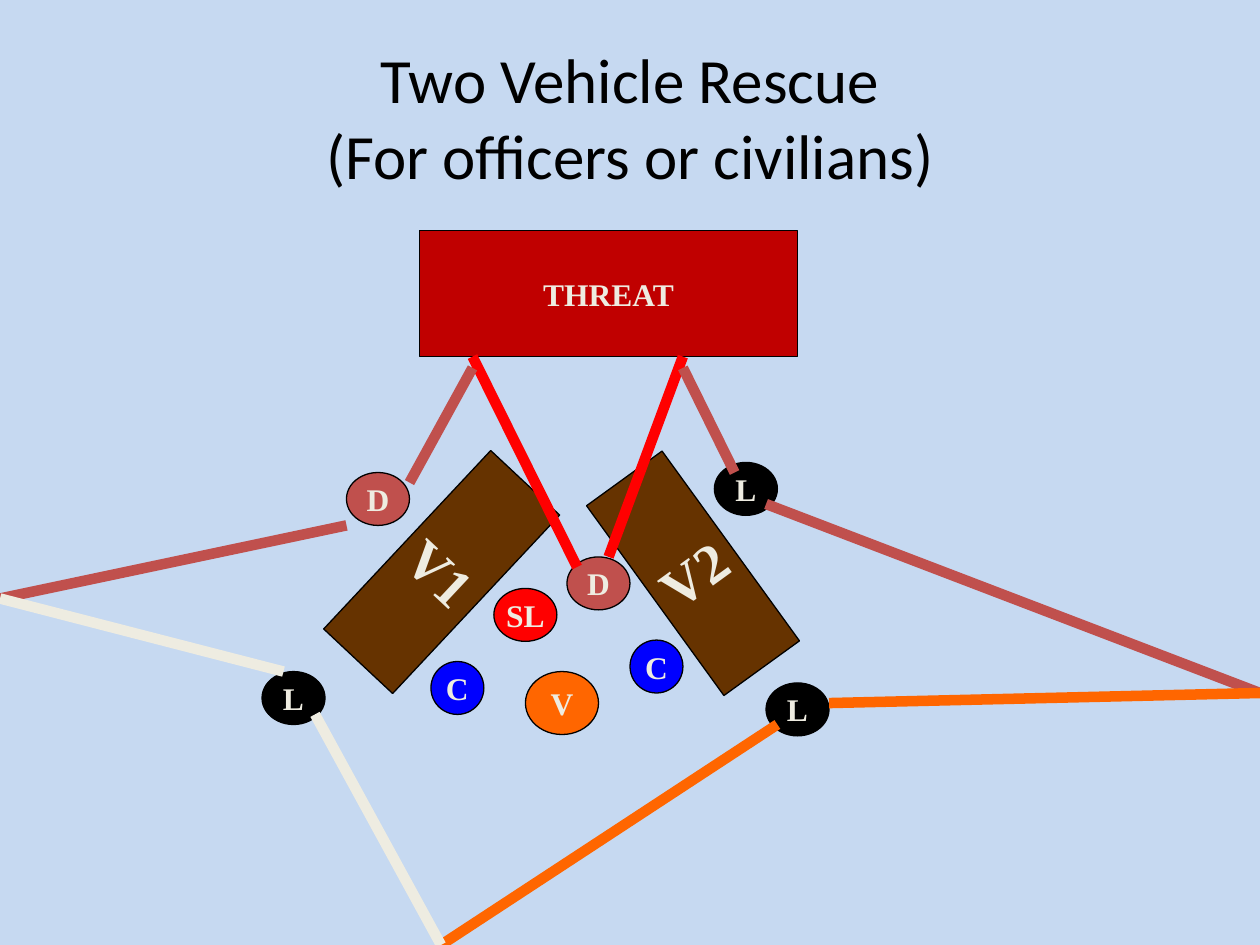
import pptx
import pptx.util
import pptx.dml.color
import pptx.enum.shapes
import pptx.enum.text
import pptx.oxml
import pptx.oxml.ns
from dataclasses import dataclass
from pptx.util import Inches

SHAPES = pptx.enum.shapes.MSO_SHAPE


@dataclass(frozen=True)
class Theme:
    background: str = "C6D9F1"
    ink: str = "000000"
    cream: str = "EEECE1"
    threat: str = "C00000"
    vehicle: str = "663300"
    victim: str = "FF6600"
    leader: str = "FF0000"
    driver: str = "C0504D"
    contact: str = "0000FF"
    title_font: str = "Calibri"
    label_font: str = "Times New Roman"
    title_size: int = 36
    vehicle_size: int = 32
    label_size: int = 18
    outline: float = 0.75
    sightline: float = 6


@dataclass(frozen=True)
class Box:
    left: float
    top: float
    width: float
    height: float

    def inside(self, left, top, width, height):
        return Box(self.left + left, self.top + top, width, height)

    def lengths(self):
        return [Inches(value) for value in (self.left, self.top, self.width, self.height)]


THEME = Theme()


def rgb(value):
    return pptx.dml.color.RGBColor.from_string(value)


def add_span(para, text, font, size, color, bold=False):
    span = para.add_run()
    span.text = text
    span.font.name = font
    span.font.size = pptx.util.Pt(size)
    span.font.bold = bold
    span.font.color.rgb = rgb(color)


def add_marker(page, kind, box, label, fill, size=THEME.label_size, rotation=0):
    marker = page.shapes.add_shape(kind, *box.lengths())
    marker.shadow.inherit = False
    marker.rotation = rotation
    marker.fill.solid()
    marker.fill.fore_color.rgb = rgb(fill)
    marker.line.color.rgb = rgb(THEME.ink)
    marker.line.width = pptx.util.Pt(THEME.outline)
    frame = marker.text_frame
    frame.word_wrap = False
    frame.vertical_anchor = pptx.enum.text.MSO_ANCHOR.MIDDLE
    para = frame.paragraphs[0]
    para.alignment = pptx.enum.text.PP_ALIGN.CENTER
    add_span(para, label, THEME.label_font, size, THEME.cream, bold=True)


def add_sightline(page, box, start, end, color):
    points = [Inches(value) for x, y in (start, end) for value in (box.left + x, box.top + y)]
    sightline = page.shapes.add_connector(pptx.enum.shapes.MSO_CONNECTOR.STRAIGHT, *points)
    sightline.line.color.rgb = rgb(color)
    sightline.line.width = pptx.util.Pt(THEME.sightline)
    properties = sightline._element.spPr
    properties.append(pptx.oxml.parse_xml(f"<a:effectLst {pptx.oxml.ns.nsdecls('a')}/>"))


def add_title(page, box):
    frame = page.shapes.add_textbox(*box.lengths()).text_frame
    frame.word_wrap = True
    frame.vertical_anchor = pptx.enum.text.MSO_ANCHOR.MIDDLE
    para = frame.paragraphs[0]
    para.alignment = pptx.enum.text.PP_ALIGN.CENTER
    add_span(para, "Two Vehicle Rescue", THEME.title_font, THEME.title_size, THEME.ink)
    para.add_line_break()
    add_span(para, "(For officers or civilians)", THEME.title_font, THEME.title_size, THEME.ink)


def add_vehicles(page, box):
    for label, place, rotation in (
        ("V1", (3.13, 1.07, 0.75, 1.94), 43.1),
        ("V2", (5.13, 1.12, 0.74, 1.86), 324.1),
    ):
        add_marker(page, SHAPES.RECTANGLE, box.inside(*place), label,
                   THEME.vehicle, THEME.vehicle_size, rotation)


def add_team(page, box):
    wide, large, small = (0.5, 0.42), (0.58, 0.5), (0.42, 0.42)
    for label, left, top, size, fill in (
        ("V", 4.17, 2.83, large, THEME.victim),
        ("L", 2.08, 2.83, wide, THEME.ink),
        ("SL", 3.92, 2.17, wide, THEME.leader),
        ("D", 2.75, 1.25, wide, THEME.driver),
        ("C", 3.42, 2.75, small, THEME.contact),
        ("D", 4.5, 1.92, wide, THEME.driver),
        ("C", 5, 2.58, small, THEME.contact),
        ("L", 6.08, 2.92, wide, THEME.ink),
        ("L", 5.67, 1.17, wide, THEME.ink),
    ):
        add_marker(page, SHAPES.OVAL, box.inside(left, top, *size), label, fill)


def add_sightlines(page, box):
    left_edge, right_edge, bottom_edge = (0, 2.25), (box.width, 3), (3.5, box.height)
    for start, end, color in (
        ((4.58, 2), (3.75, 0.33), THEME.leader),
        ((4.83, 1.92), (5.42, 0.33), THEME.leader),
        ((3.25, 1.33), (3.75, 0.42), THEME.driver),
        ((2.75, 1.67), left_edge, THEME.driver),
        ((5.83, 1.25), (5.42, 0.42), THEME.driver),
        ((6.08, 1.5), right_edge, THEME.driver),
        ((2.25, 2.83), left_edge, THEME.cream),
        ((6.58, 3.08), right_edge, THEME.victim),
        ((6.17, 3.25), bottom_edge, THEME.victim),
        ((2.5, 3.17), bottom_edge, THEME.cream),
    ):
        add_sightline(page, box, start, end, color)


def add_rescue_slide(deck, box):
    page = deck.slides.add_slide(deck.slide_layouts[6])
    page.background.fill.solid()
    page.background.fill.fore_color.rgb = rgb(THEME.background)
    scene = box.inside(0, 2.5, box.width, box.height - 2.5)
    add_title(page, box.inside(0.5, 0.3, 9, 1.25))
    add_marker(page, SHAPES.RECTANGLE, box.inside(3.33, 1.83, 3, 1), "THREAT", THEME.threat)
    add_vehicles(page, scene)
    add_team(page, scene)
    add_sightlines(page, scene)


def main():
    deck = pptx.Presentation()
    slide_box = Box(0, 0, 10, 7.5)
    deck.slide_width = Inches(slide_box.width)
    deck.slide_height = Inches(slide_box.height)
    add_rescue_slide(deck, slide_box)
    deck.save("out.pptx")


if __name__ == "__main__":
    main()
